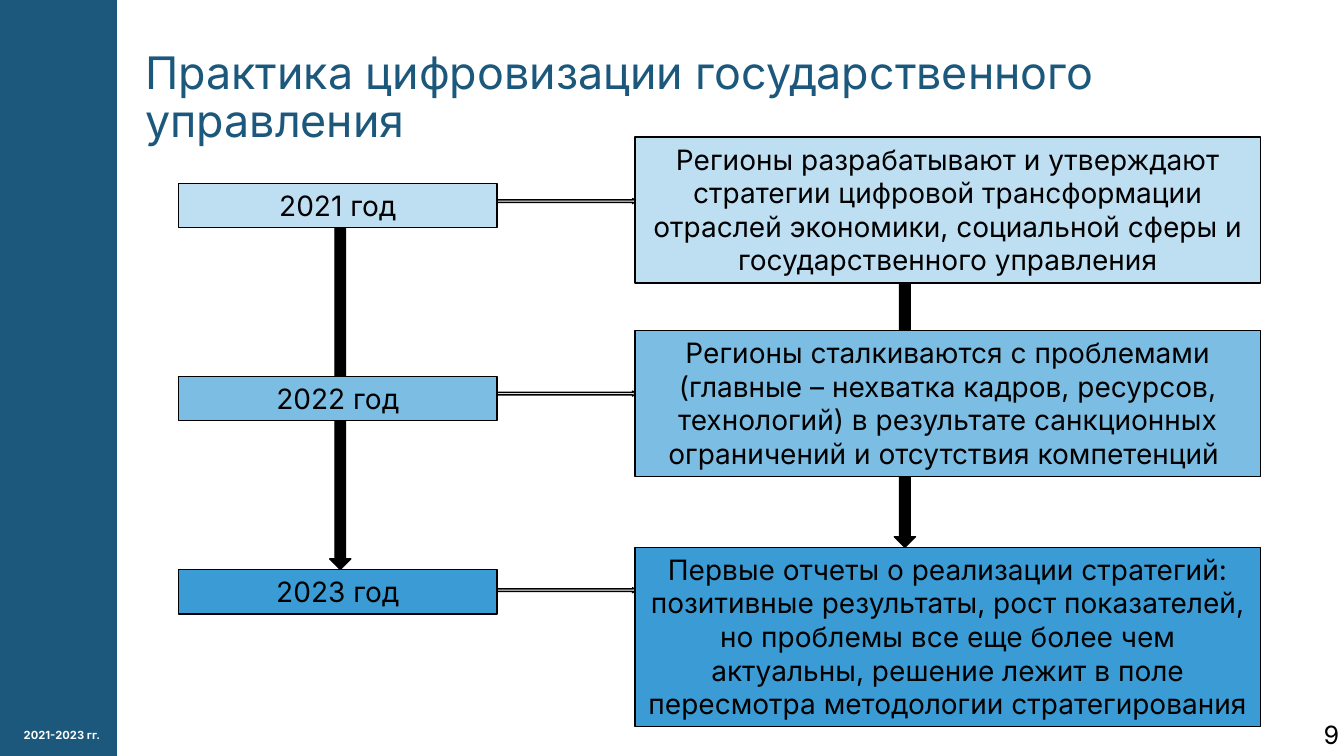
from pptx import Presentation
from pptx.dml.color import RGBColor
from pptx.enum.shapes import MSO_SHAPE as Shape
from pptx.enum.text import MSO_ANCHOR as Anchor, MSO_AUTO_SIZE as AutoSize, PP_ALIGN as Align
from pptx.util import Inches, Pt

FONT = "Inter"
NAVY, BLACK, WHITE = "1B587C", "000000", "FFFFFF"
YEAR_LEFT, YEAR_WIDTH, YEAR_HEIGHT = 1.77, 3.16, 0.44
EVENT_LEFT, EVENT_WIDTH = 6.3, 6.2
FIRST_YEAR_TOP, YEAR_STEP = 1.82, 1.915

STAGES = [
    ("2021 год", "BEDEF1", 1.36, 1.45, 1.97,
     "Регионы разрабатывают и утверждают стратегии цифровой трансформации "
     "отраслей экономики, социальной сферы и государственного управления"),
    ("2022 год", "7CBDE3", 3.28, 1.45, 3.88,
     "Регионы сталкиваются с проблемами (главные – нехватка кадров, ресурсов, "
     "технологий) в результате санкционных ограничений и отсутствия компетенций "),
    ("2023 год", "3B9CD5", 5.43, 1.78, 5.83,
     "Первые отчеты о реализации стратегий: позитивные результаты, рост "
     "показателей, но проблемы все еще более чем актуальны, решение лежит "
     "в поле пересмотра методологии стратегирования"),
]


def rgb(value):
    """Turn a hex string into a colour."""
    return RGBColor.from_string(value)


def write(frame, text, size, color=BLACK, align=Align.CENTER, bold=False):
    """Fill a text frame with one formatted paragraph."""
    frame.text = text
    paragraph = frame.paragraphs[0]
    paragraph.alignment = align
    font = paragraph.runs[0].font
    font.name, font.size, font.bold = FONT, Pt(size), bold
    font.color.rgb = rgb(color)
    return paragraph


def add_figure(slide, kind, left, top, width, height, fill, line=BLACK):
    """Add a filled preset shape with a one-point outline or none."""
    figure = slide.shapes.add_shape(
        kind, Inches(left), Inches(top), Inches(width), Inches(height))
    figure.shadow.inherit = False
    figure.fill.solid()
    figure.fill.fore_color.rgb = rgb(fill)
    if line:
        figure.line.color.rgb = rgb(line)
        figure.line.width = Pt(1)
    else:
        figure.line.fill.background()
    return figure


def add_box(slide, left, top, width, height, fill, text):
    """Add a captioned rectangle of the scheme."""
    box = add_figure(slide, Shape.RECTANGLE, left, top, width, height, fill)
    frame = box.text_frame
    frame.word_wrap = True
    frame.auto_size = AutoSize.SHAPE_TO_FIT_TEXT
    frame.vertical_anchor = Anchor.TOP
    write(frame, text, 20)


def add_label(slide, left, top, width, height, text, size, wrap=True, **style):
    """Add a plain text box and return its frame."""
    label = slide.shapes.add_textbox(
        Inches(left), Inches(top), Inches(width), Inches(height))
    frame = label.text_frame
    frame.word_wrap = wrap
    write(frame, text, size, **style)
    return frame


def set_title(slide, text):
    """Place and format the title placeholder."""
    title = slide.shapes.title
    title.left, title.top = Inches(1.44), Inches(0.5)
    title.width, title.height = Inches(10.76), Inches(1.16)
    frame = title.text_frame
    frame.word_wrap = True
    frame.auto_size = AutoSize.NONE
    frame.vertical_anchor = Anchor.TOP
    frame.margin_left = frame.margin_right = 0
    frame.margin_top = frame.margin_bottom = 0
    write(frame, text, 32, NAVY, Align.LEFT).line_spacing = 0.9


def main():
    """Build the slide and save it."""
    deck = Presentation()
    deck.slide_width, deck.slide_height = Inches(13.33), Inches(7.5)
    slide = deck.slides.add_slide(deck.slide_layouts[5])

    add_figure(slide, Shape.RECTANGLE, 0, 0, 1.16, 7.5, NAVY, line=None)
    period = add_label(slide, 0.07, 7.09, 1.09, 0.41, "2021-2023 гг.", 8,
                       color=WHITE, bold=True)
    period.vertical_anchor = Anchor.MIDDLE
    set_title(slide, "Практика цифровизации государственного управления")

    add_figure(slide, Shape.DOWN_ARROW, 8.87, 2.67, 0.21, 2.76, BLACK)
    add_figure(slide, Shape.DOWN_ARROW, 3.27, 2.22, 0.21, 3.43, BLACK)

    year_right = YEAR_LEFT + YEAR_WIDTH
    for row, (year, fill, top, height, arrow_top, event) in enumerate(STAGES):
        add_figure(slide, Shape.RIGHT_ARROW, year_right, arrow_top,
                   EVENT_LEFT - year_right, 0.05, WHITE)
        add_box(slide, YEAR_LEFT, FIRST_YEAR_TOP + row * YEAR_STEP,
                YEAR_WIDTH, YEAR_HEIGHT, fill, year)
        add_box(slide, EVENT_LEFT, top, EVENT_WIDTH, height, fill, event)

    number = add_label(slide, 13.03, 7.09, 0.33, 0.4, "9", 18, wrap=False,
                       align=Align.LEFT)
    number.auto_size = AutoSize.SHAPE_TO_FIT_TEXT
    deck.save("out.pptx")


if __name__ == "__main__":
    main()
